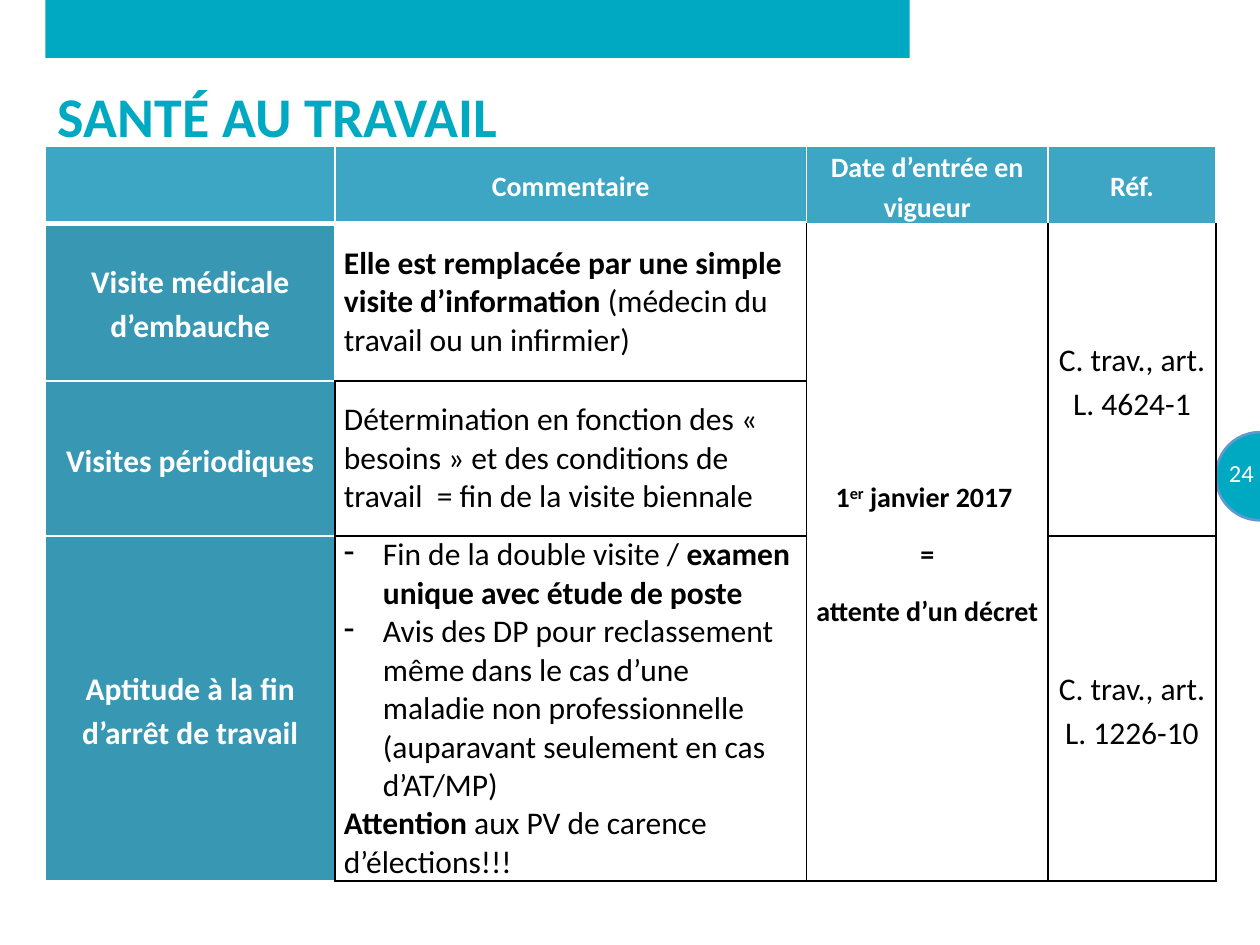
from lxml import etree
from pptx import Presentation
from pptx.dml.color import RGBColor
from pptx.enum.shapes import MSO_SHAPE
from pptx.enum.text import MSO_ANCHOR, PP_ALIGN
from pptx.oxml.ns import qn
from pptx.util import Inches, Pt

RECTANGLE, OVAL = MSO_SHAPE.RECTANGLE, MSO_SHAPE.OVAL
TOP, MIDDLE = MSO_ANCHOR.TOP, MSO_ANCHOR.MIDDLE
LEFT, CENTER, RIGHT = PP_ALIGN.LEFT, PP_ALIGN.CENTER, PP_ALIGN.RIGHT

TEAL = RGBColor(0x00, 0xA9, 0xC2)
RING = RGBColor(0x5D, 0x9A, 0xCF)
HEADER = RGBColor(0x3C, 0xA6, 0xC4)
LABEL = RGBColor(0x38, 0x98, 0xB4)
WHITE = RGBColor(0xFF, 0xFF, 0xFF)
BLACK = RGBColor(0x00, 0x00, 0x00)
FONT = "Calibri"

COLS = [2.3, 3.74, 1.92, 1.33]
ROWS = [0.6, 1.25, 1.23, 2.74]

# (row, column): paragraphs, each a list of (text, bold) runs
CELLS = {
    (0, 1): [[("Commentaire", True)]],
    (0, 2): [[("Date d’entrée en vigueur", True)]],
    (0, 3): [[("Réf.", True)]],
    (1, 0): [[("Visite médicale d’embauche", True)]],
    (2, 0): [[("Visites périodiques", True)]],
    (3, 0): [[("Aptitude à la fin d’arrêt de travail", True)]],
    (1, 1): [[("Elle est remplacée par une simple visite d’information ", True),
              ("(médecin du travail ou un infirmier)", False)]],
    (2, 1): [[("Détermination en fonction des « besoins » et des conditions "
               "de travail  = fin de la visite biennale", False)]],
    (3, 1): [[("Fin de la double visite / ", False),
              ("examen unique avec étude de poste", True)],
             [("Avis des DP pour reclassement même dans le cas d’une maladie non "
               "professionnelle (auparavant seulement en cas d’AT/MP)", False)],
             [("Attention ", True), ("aux PV de carence d’élections!!!", False)]],
    (1, 2): [[("1", True), ("er", True), (" janvier 2017 ", True)],
             [("=", True)],
             [("attente d’un décret", True)]],
    (1, 3): [[("C. trav., art. L. 4624-1", False)]],
    (3, 3): [[("C. trav., art. L. 1226-10", False)]],
}
BULLETED = [(3, 1, 0), (3, 1, 1)]


def set_border(cell, side, color, width):
    ln = etree.SubElement(cell._tc.get_or_add_tcPr(), qn(f"a:ln{side}"), w=str(Pt(width)))
    fill = etree.SubElement(ln, qn("a:solidFill"))
    etree.SubElement(fill, qn("a:srgbClr"), val=str(color))


def set_font(font, size, color, bold=False):
    font.name, font.size, font.bold = FONT, Pt(size), bold
    font.color.rgb = color


prs = Presentation()
prs.slide_width, prs.slide_height = Inches(10), Inches(7.5)
s = prs.slides.add_slide(prs.slide_layouts[5])

# Top band and page number
band = s.shapes.add_shape(RECTANGLE, Inches(0.36), 0, Inches(6.86), Inches(0.46))
disc = s.shapes.add_shape(OVAL, Inches(9.65), Inches(3.43), Inches(0.7), Inches(0.7))
for sp in (band, disc):
    sp.shadow.inherit = False
    sp.fill.solid()
    sp.fill.fore_color.rgb = TEAL
band.line.fill.background()
disc.line.color.rgb = RING
disc.line.width = Pt(1.5)

number = s.shapes.add_textbox(Inches(9.62), Inches(3.55), Inches(0.43), Inches(0.4))
tf = number.text_frame
tf.word_wrap = True
tf.vertical_anchor = MIDDLE
p = tf.paragraphs[0]
p.text = "24"
p.alignment = RIGHT
set_font(p.font, 14, WHITE)

# Title
title = s.shapes.title
title.left, title.top = Inches(0.36), Inches(0.6)
title.width, title.height = Inches(9.29), Inches(0.77)
tf = title.text_frame
tf.vertical_anchor = TOP
p = tf.paragraphs[0]
p.text = "SANTÉ AU TRAVAIL"
p.alignment = LEFT
set_font(p.font, 32, TEAL, True)

# Table
table = s.shapes.add_table(len(ROWS), len(COLS), Inches(0.36), Inches(1.16),
                           Inches(sum(COLS)), Inches(sum(ROWS))).table
for column, width in zip(table.columns, COLS):
    column.width = Inches(width)
for row, height in zip(table.rows, ROWS):
    row.height = Inches(height)
table.cell(1, 2).merge(table.cell(3, 2))
table.cell(1, 3).merge(table.cell(2, 3))

for r in range(len(ROWS)):
    for c in range(len(COLS)):
        cell = table.cell(r, c)
        header, label = r == 0, c == 0
        white_left = header or label or (r, c) == (1, 1)
        white_right = header or (r, c) == (1, 0)
        white_top = r <= 1 or label
        white_bottom = header or label
        set_border(cell, "L", WHITE if white_left else BLACK, 1)
        set_border(cell, "R", WHITE if white_right else BLACK, 1)
        # The rule under the header is thick over the first two columns
        set_border(cell, "T", WHITE if white_top else BLACK, 3 if r == 1 and c < 2 else 1)
        set_border(cell, "B", WHITE if white_bottom else BLACK, 3 if header and c < 2 else 1)
        cell.fill.solid()
        cell.fill.fore_color.rgb = HEADER if header else LABEL if label else WHITE
        cell.vertical_anchor = MIDDLE
        cell.margin_left = cell.margin_right = Inches(0.05 if header else 0.07)
        cell.margin_top = cell.margin_bottom = 0

        for i, runs in enumerate(CELLS.get((r, c), [])):
            tf = cell.text_frame
            p = tf.add_paragraph() if i else tf.paragraphs[0]
            set_font(p.font, 16 if header or c == 2 else 18,
                     WHITE if header or label else BLACK, runs[0][1])
            if c != 1 or header:
                p.alignment = CENTER
                p.line_spacing = 1.15
            if header or c == 2:
                p.space_after = Pt(10)
            if (r, c, i) in BULLETED:
                pPr = p._p.get_or_add_pPr()
                pPr.set("marL", str(Inches(0.31)))
                pPr.set("indent", str(-Inches(0.31)))
                bullet = etree.Element(qn("a:buChar"), char="-")
                pPr.find(qn("a:defRPr")).addprevious(bullet)
            for text, bold in runs:
                run = p.add_run()
                run.text = text
                if bold != runs[0][1]:
                    run.font.bold = bold
                if text == "er":
                    run._r.get_or_add_rPr().set("baseline", "30000")

prs.save("out.pptx")
